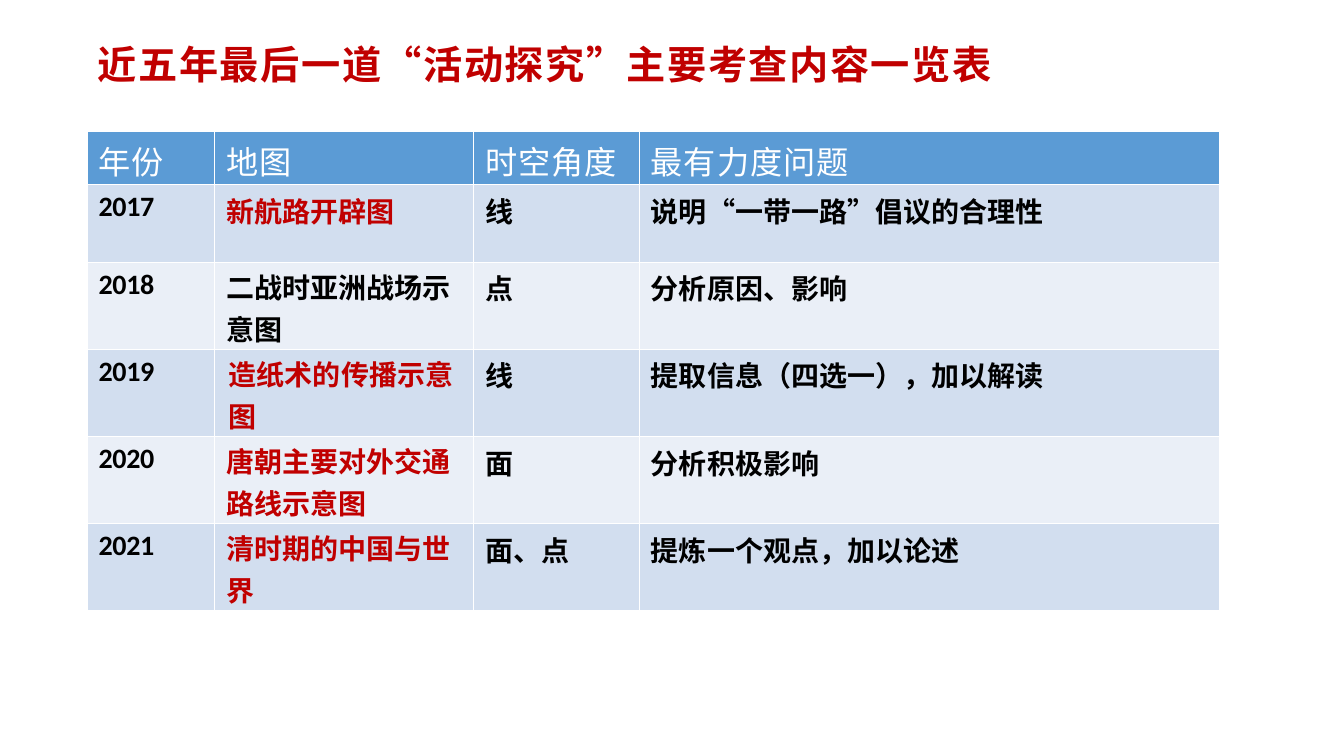
from dataclasses import dataclass

from lxml import etree
from pptx import Presentation
from pptx.dml.color import RGBColor
from pptx.enum.text import MSO_ANCHOR, MSO_AUTO_SIZE, PP_ALIGN
from pptx.oxml.ns import qn
from pptx.util import Pt

TOP = MSO_ANCHOR.TOP
LEFT = PP_ALIGN.LEFT
NO_AUTOFIT = MSO_AUTO_SIZE.NONE
TITLE_ONLY = 5


@dataclass(frozen=True)
class Theme:
    """Colours, fonts and type sizes of the slide."""
    red: str = "C00000"
    black: str = "000000"
    white: str = "FFFFFF"
    header: str = "5B9BD5"
    bands: tuple = ("D2DEEF", "EAEFF7")
    cjk: str = "Noto Sans CJK SC"
    latin: str = "Calibri"
    title_size: float = 28
    header_size: float = 23
    body_size: float = 20


class Deck:
    """Draws the elements of the current slide in one style."""

    def __init__(self, prs, theme):
        self.theme = theme
        self.s = prs.slides.add_slide(prs.slide_layouts[TITLE_ONLY])

    def set_text(self, tf, text, size, color, bold=True, font=None, spacing=0, line=1.0):
        """Set one formatted paragraph in a text frame."""
        font = font or self.theme.cjk
        tf.text = text
        p = tf.paragraphs[0]
        p.alignment = LEFT
        p.line_spacing = line
        for r in p.runs:
            r.font.size = Pt(size)
            r.font.bold = bold
            r.font.name = font
            r.font.color.rgb = RGBColor.from_string(color)
            rPr = r._r.get_or_add_rPr()
            rPr.set("lang", "zh-CN")
            rPr.set("spc", str(round(spacing * 100)))
            ea = etree.Element(qn("a:ea"), typeface=font)
            rPr.find(qn("a:latin")).addnext(ea)

    def title(self, text, left, top, width, height):
        """Place and format the title placeholder."""
        sp = self.s.shapes.title
        sp.left, sp.top, sp.width, sp.height = map(Pt, (left, top, width, height))
        tf = sp.text_frame
        tf.auto_size = NO_AUTOFIT
        tf.word_wrap = True
        tf.vertical_anchor = TOP
        tf.margin_top = tf.margin_bottom = 0
        tf.margin_left = Pt(8)
        self.set_text(tf, text, self.theme.title_size, self.theme.red, spacing=1.1)

    def table(self, left, top, widths, heights):
        """Add an empty table with the given column and row sizes."""
        frame = self.s.shapes.add_table(len(heights), len(widths), Pt(left), Pt(top),
                                        Pt(sum(widths)), Pt(sum(heights)))
        table = frame.table
        for column, width in zip(table.columns, widths):
            column.width = Pt(width)
        for row, height in zip(table.rows, heights):
            row.height = Pt(height)
        return table

    def cell(self, cell, text, fill, size, color, left=8, top=4, **style):
        """Fill, border and letter one table cell."""
        cell.margin_left, cell.margin_top = Pt(left), Pt(top)
        cell.margin_right = cell.margin_bottom = 0
        cell.vertical_anchor = TOP
        self.set_text(cell.text_frame, text, size, color, **style)
        tcPr = cell._tc.get_or_add_tcPr()
        for side, weight in (("L", 1), ("R", 1), ("T", 0.25), ("B", 0.25)):
            ln = etree.SubElement(tcPr, qn(f"a:ln{side}"), w=str(Pt(weight)))
            solid = etree.SubElement(ln, qn("a:solidFill"))
            etree.SubElement(solid, qn("a:srgbClr"), val=self.theme.white)
        cell.fill.solid()
        cell.fill.fore_color.rgb = RGBColor.from_string(fill)


HEADERS = ("年份", "地图", "时空角度", "最有力度问题")
ROWS = (
    ("2017", "新航路开辟图", "线", "说明“一带一路”倡议的合理性"),
    ("2018", "二战时亚洲战场示意图", "点", "分析原因、影响"),
    ("2019", "造纸术的传播示意图", "线", "提取信息（四选一），加以解读"),
    ("2020", "唐朝主要对外交通路线示意图", "面", "分析积极影响"),
    ("2021", "清时期的中国与世界", "面、点", "提炼一个观点，加以论述"),
)
BLACK_MAP_YEAR = "2018"
INSET_MAP_YEAR = "2019"
ONE_LINE_CHARS = 8


def main():
    """Build the overview slide and save it."""
    prs = Presentation()
    prs.slide_width, prs.slide_height = Pt(960), Pt(540)
    theme = Theme()
    deck = Deck(prs, theme)
    deck.title("近五年最后一道“活动探究”主要考查内容一览表", 62, 28.5, 761, 41)

    table = deck.table(62.5, 93.5, (91, 185, 118.5, 414), (38, 55.5, *[62.2] * 4))
    for col, text in enumerate(HEADERS):
        deck.cell(table.cell(0, col), text, theme.header, theme.header_size, theme.white,
                  top=5, bold=False, spacing=0.6, line=0.98)
    for row, (year, map_name, angle, question) in enumerate(ROWS, 1):
        fill = theme.bands[(row - 1) % 2]
        deck.cell(table.cell(row, 0), year, fill, theme.body_size, theme.black,
                  font=theme.latin, spacing=-0.3)
        wraps = len(map_name) > ONE_LINE_CHARS
        deck.cell(table.cell(row, 1), map_name, fill, theme.body_size,
                  theme.black if year == BLACK_MAP_YEAR else theme.red,
                  left=10 if year == INSET_MAP_YEAR else 8,
                  top=2 if wraps else 4, line=1.03 if wraps else 1.0)
        for col, text in ((2, angle), (3, question)):
            deck.cell(table.cell(row, col), text, fill, theme.body_size, theme.black)
    prs.save("out.pptx")


if __name__ == "__main__":
    main()
